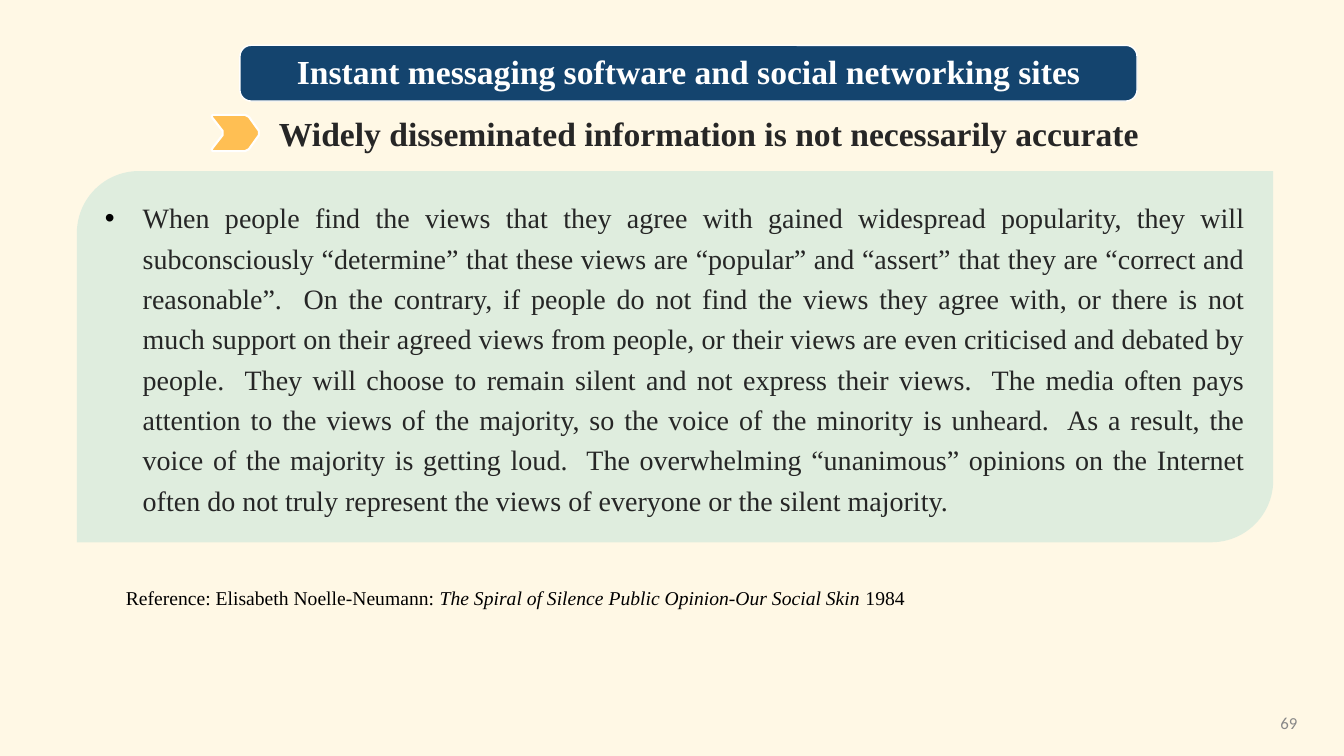
"""Build the slide on widely shared views and the silent majority."""
from dataclasses import dataclass

from lxml.etree import SubElement
from pptx import Presentation
from pptx.dml.color import RGBColor
from pptx.enum.shapes import MSO_SHAPE
from pptx.enum.text import MSO_ANCHOR, MSO_AUTO_SIZE, PP_ALIGN
from pptx.oxml.ns import qn
from pptx.shapes.autoshape import Shape
from pptx.slide import Slide
from pptx.util import Pt


@dataclass(frozen=True)
class Theme:
    serif: str = "Times New Roman"
    sans: str = "Calibri"
    paper: str = "FFF8E5"
    navy: str = "14446E"
    gold: str = "FFBF53"
    teal: str = "51BDC2"
    white: str = "FFFFFF"
    black: str = "000000"
    ink: str = "262626"
    gray: str = "888888"
    head: float = 24
    body: float = 20
    note: float = 14
    small: float = 12


@dataclass(frozen=True)
class Box:
    left: float
    top: float
    width: float
    height: float


@dataclass(frozen=True)
class Run:
    text: str
    italic: bool = False


@dataclass(frozen=True)
class Label:
    runs: tuple[Run, ...]
    size: float
    color: str
    font: str = "Times New Roman"
    bold: bool = False
    align: PP_ALIGN = PP_ALIGN.LEFT
    anchor: MSO_ANCHOR = MSO_ANCHOR.TOP
    lines: float = 1.0
    pad: tuple[float, float] = (7.2, 3.6)
    bullet: bool = False


THEME = Theme()
BANNER = Box(171.4, 32.4, 640.8, 39.8)
PANEL = Box(54.9, 122.2, 854.6, 265.2)

TITLE = Label((Run("Instant messaging software and social networking sites"),),
              THEME.head, THEME.white, bold=True, align=PP_ALIGN.CENTER,
              anchor=MSO_ANCHOR.MIDDLE, lines=0.9, pad=(19.4, 2.2))
BODY = Label((Run(
    "When people find the views that they agree with gained widespread popularity, "
    "they will subconsciously “determine” that these views are “popular” and “assert” "
    "that they are “correct and reasonable”.  On the contrary, if people do not find "
    "the views they agree with, or there is not much support on their agreed views "
    "from people, or their views are even criticised and debated by people.  They will "
    "choose to remain silent and not express their views.  The media often pays "
    "attention to the views of the majority, so the voice of the minority is unheard.  "
    "As a result, the voice of the majority is getting loud.  The overwhelming "
    "“unanimous” opinions on the Internet often do not truly represent the views of "
    "everyone or the silent majority."),),
    THEME.body, THEME.ink, align=PP_ALIGN.JUSTIFY, lines=1.2, bullet=True)
NOTES = (
    (Box(192.2, 77, 723.6, 36),
     Label((Run("Widely disseminated information is not necessarily accurate"),),
           THEME.head, THEME.ink, bold=True)),
    (Box(82.8, 414.7, 591.8, 24.5),
     Label((Run("Reference: Elisabeth Noelle-Neumann: "),
            Run("The Spiral of Silence Public Opinion-Our Social Skin ", True),
            Run("1984")), THEME.note, THEME.black)),
    (Box(717.8, 501.8, 216, 28.8),
     Label((Run("69"),), THEME.small, THEME.gray, THEME.sans,
           align=PP_ALIGN.RIGHT, anchor=MSO_ANCHOR.MIDDLE)),
)
ARROW_TOP = ((159.1, 93.6), (151.2, 83.5), (151.9, 82.1),
             (175, 82.1), (177.8, 83.5), (185, 93.6))
ARROW_SUM = 190.1


def place(shape: Shape, box: Box) -> None:
    shape.left, shape.top = Pt(box.left), Pt(box.top)
    shape.width, shape.height = Pt(box.width), Pt(box.height)


def paint(shape: Shape, color: str, line: float = 0) -> None:
    shape.shadow.inherit = False
    shape.fill.solid()
    shape.fill.fore_color.rgb = RGBColor.from_string(color)
    if line:
        shape.line.color.rgb = RGBColor.from_string(THEME.white)
        shape.line.width = Pt(line)
    else:
        shape.line.fill.background()


def write(shape: Shape, label: Label) -> None:
    frame = shape.text_frame
    frame.word_wrap = True
    frame.auto_size = MSO_AUTO_SIZE.NONE
    frame.vertical_anchor = label.anchor
    frame.margin_left = frame.margin_right = Pt(label.pad[0])
    frame.margin_top = frame.margin_bottom = Pt(label.pad[1])
    para = frame.paragraphs[0]
    if label.bullet:
        props = para._p.get_or_add_pPr()
        props.set("marL", str(Pt(27)))
        props.set("indent", str(Pt(-27)))
        tint = SubElement(props, qn("a:buClr"))
        SubElement(tint, qn("a:srgbClr"), val=THEME.black)
        SubElement(props, qn("a:buFont"), typeface="Arial")
        SubElement(props, qn("a:buChar"), char="•")
    para.alignment = label.align
    para.line_spacing = label.lines
    for item in label.runs:
        run = para.add_run()
        run.text = item.text
        font = run.font
        font.name, font.size = label.font, Pt(label.size)
        font.bold, font.italic = label.bold, item.italic
        font.color.rgb = RGBColor.from_string(label.color)


def add_block(slide: Slide, kind: MSO_SHAPE, box: Box, color: str,
              bends: tuple[float, ...], line: float = 0) -> Shape:
    shape = slide.shapes.add_shape(kind, 0, 0, 0, 0)
    place(shape, box)
    for index, bend in enumerate(bends):
        shape.adjustments[index] = bend
    paint(shape, color, line)
    return shape


def add_arrow(slide: Slide) -> None:
    low = [(x, ARROW_SUM - y) for x, y in reversed(ARROW_TOP)]
    start, *rest = [(Pt(x), Pt(y)) for x, y in (*ARROW_TOP, *low)]
    pen = slide.shapes.build_freeform(*start)
    pen.add_line_segments(rest, close=True)
    paint(pen.convert_to_shape(), THEME.gold, 1.5)


def main() -> None:
    deck = Presentation()
    deck.slide_width, deck.slide_height = Pt(960), Pt(540)
    slide = deck.slides.add_slide(deck.slide_layouts[5])
    slide.background.fill.solid()
    slide.background.fill.fore_color.rgb = RGBColor.from_string(THEME.paper)

    panel = add_block(slide, MSO_SHAPE.ROUND_2_DIAG_RECTANGLE, PANEL,
                      THEME.teal, (0.167, 0))
    tint = panel._element.spPr.find(qn("a:solidFill"))[0]
    SubElement(tint, qn("a:alpha"), val="18000")
    write(panel, BODY)

    for box, label in NOTES:
        note = slide.shapes.add_textbox(0, 0, 0, 0)
        place(note, box)
        write(note, label)
    add_arrow(slide)

    add_block(slide, MSO_SHAPE.ROUNDED_RECTANGLE, BANNER, THEME.navy, (0.2,), 1)
    title = slide.shapes.title
    place(title, BANNER)
    write(title, TITLE)
    slide.shapes._spTree.append(title._element)
    deck.save("out.pptx")


if __name__ == "__main__":
    main()
